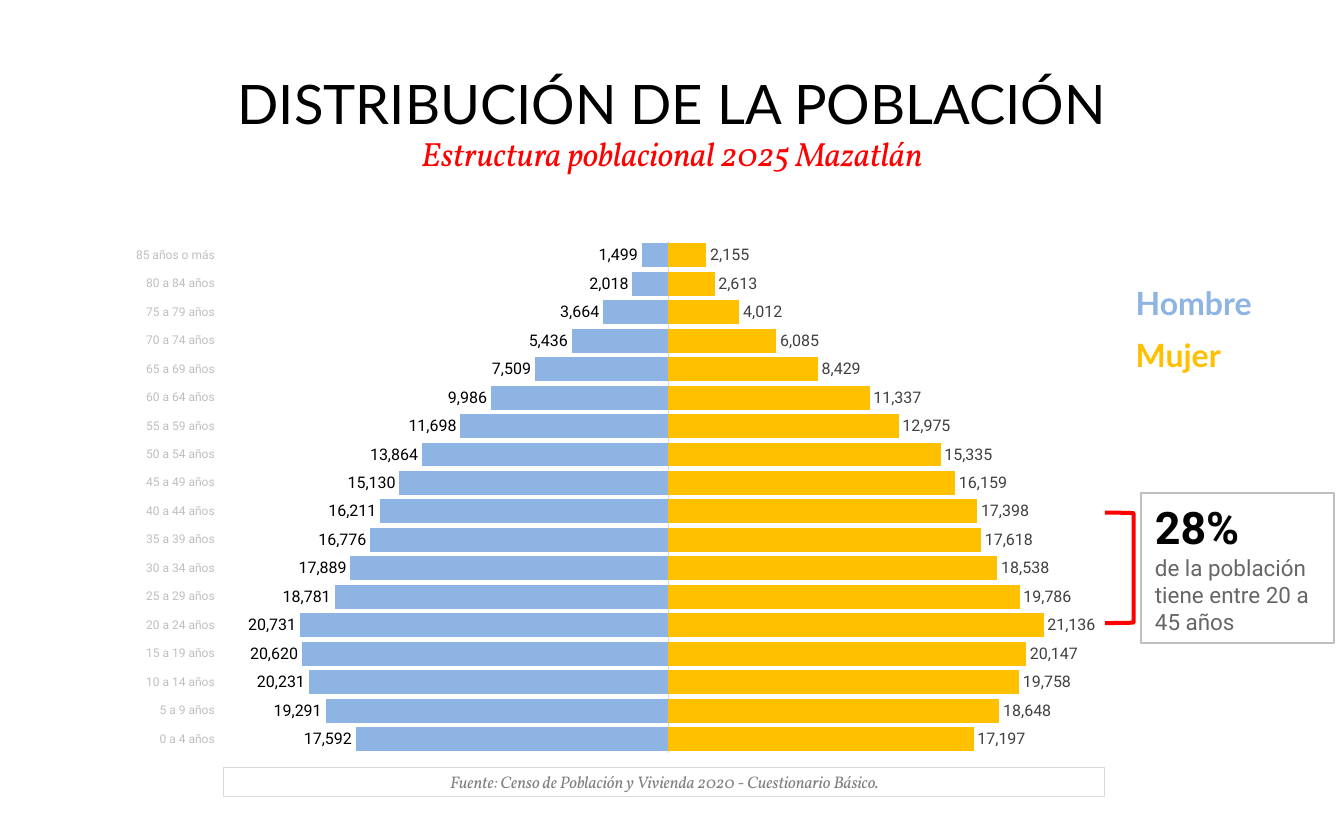
import pptx
import pptx.chart.data
import pptx.dml.color
import pptx.enum.chart
import pptx.enum.shapes
import pptx.enum.text
import pptx.util
from lxml import etree

RGBColor = pptx.dml.color.RGBColor
BLACK = RGBColor(0x00, 0x00, 0x00)
WHITE = RGBColor(0xFF, 0xFF, 0xFF)
RED = RGBColor(0xFF, 0x00, 0x00)
BLUE = RGBColor(0x8E, 0xB4, 0xE3)
AMBER = RGBColor(0xFF, 0xC0, 0x00)
CHARCOAL = RGBColor(0x40, 0x40, 0x40)
DARK_GRAY = RGBColor(0x66, 0x66, 0x66)
GRAY = RGBColor(0x80, 0x80, 0x80)
SILVER = RGBColor(0xBF, 0xBF, 0xBF)
PALE_GRAY = RGBColor(0xD9, 0xD9, 0xD9)

LEFT = pptx.enum.text.PP_ALIGN.LEFT
CENTER = pptx.enum.text.PP_ALIGN.CENTER
RECTANGLE = pptx.enum.shapes.MSO_SHAPE.RECTANGLE

presentation = pptx.Presentation()
presentation.slide_width = pptx.util.Inches(14)
presentation.slide_height = pptx.util.Inches(8.5)
slide = presentation.slides.add_slide(presentation.slide_layouts[6])
column = presentation.slide_width / 140
row = presentation.slide_height / 85


def place(left, top, width, height):
    return int(left * column), int(top * row), int(width * column), int(height * row)


def write(shape, runs, alignment, insets):
    frame = shape.text_frame
    frame.word_wrap = True
    frame.auto_size = pptx.enum.text.MSO_AUTO_SIZE.SHAPE_TO_FIT_TEXT
    frame.vertical_anchor = pptx.enum.text.MSO_ANCHOR.TOP
    frame.margin_left, frame.margin_top, frame.margin_right, frame.margin_bottom = map(pptx.util.Inches, insets)
    for index, (text, font_name, size, color, bold, italic) in enumerate(runs):
        paragraph = frame.paragraphs[0] if index == 0 else frame.add_paragraph()
        paragraph.alignment = alignment
        run = paragraph.add_run()
        run.text = text
        run.font.name = font_name
        run.font.size = pptx.util.Pt(size)
        run.font.color.rgb = color
        run.font.bold = bold
        run.font.italic = italic


title = slide.shapes.add_textbox(*place(10, 8.6, 120, 6))
write(title, [("DISTRIBUCIÓN DE LA POBLACIÓN", "Lato", 40.8, BLACK, False, False)],
      CENTER, (0.12, 0.06, 0.12, 0.06))
title.text_frame.paragraphs[0].line_spacing = 0.7

subtitle = slide.shapes.add_textbox(*place(0, 13.4, 140, 5.3))
write(subtitle, [("Estructura poblacional 2025 Mazatlán", "Vollkorn", 25.2, RED, False, True)],
      CENTER, (0.1, 0.05, 0.1, 0.05))

for index, (name, color) in enumerate([("Hombre", BLUE), ("Mujer", AMBER)]):
    legend = slide.shapes.add_textbox(*place(118.3, 28.8 + 5.4 * index, 15, 5.5))
    write(legend, [(name, "Lato", 24, color, True, False)], LEFT, (0, 0.07, 0.14, 0.07))

ages = [f"{start} a {start + 4} años" for start in range(0, 85, 5)] + ["85 años o más"]
men = [17592, 19291, 20231, 20620, 20731, 18781, 17889, 16776, 16211,
       15130, 13864, 11698, 9986, 7509, 5436, 3664, 2018, 1499]
women = [17197, 18648, 19758, 20147, 21136, 19786, 18538, 17618, 17398,
         16159, 15335, 12975, 11337, 8429, 6085, 4012, 2613, 2155]
chart_data = pptx.chart.data.CategoryChartData()
chart_data.categories = ages
chart_data.add_series("Hombre", [-value for value in men])
chart_data.add_series("Mujer", women)
chart = slide.shapes.add_chart(pptx.enum.chart.XL_CHART_TYPE.BAR_CLUSTERED,
                               *place(12, 24, 106.1, 55.6), chart_data).chart
chart.has_legend = False
chart.has_title = False
chart.font.name = "Calibri"
chart.font.size = pptx.util.Pt(10)
chart.font.color.rgb = BLACK

age_axis = chart.category_axis
age_axis.tick_label_position = pptx.enum.chart.XL_TICK_LABEL_POSITION.LOW
age_axis.major_tick_mark = pptx.enum.chart.XL_TICK_MARK.NONE
age_axis.format.line.color.rgb = PALE_GRAY
age_axis.format.line.width = pptx.util.Pt(0.75)
age_axis.tick_labels.font.name = "Roboto"
age_axis.tick_labels.font.size = pptx.util.Pt(9)
age_axis.tick_labels.font.color.rgb = SILVER

people_axis = chart.value_axis
people_axis.visible = False
people_axis.has_major_gridlines = False
people_axis.minimum_scale = -25000
people_axis.maximum_scale = 25000

plot = chart.plots[0]
plot.gap_width = 19
plot.overlap = 100
plot.vary_by_categories = False
styles = [(BLUE, BLACK, "\\-0;0,000"), (AMBER, CHARCOAL, "#,##0")]
for series, (fill_color, label_color, number_format) in zip(plot.series, styles):
    series.invert_if_negative = False
    series.format.fill.solid()
    series.format.fill.fore_color.rgb = fill_color
    labels = series.data_labels
    labels.show_value = True
    labels.number_format = number_format
    labels.number_format_is_linked = False
    labels.position = pptx.enum.chart.XL_LABEL_POSITION.OUTSIDE_END
    labels.font.name = "Roboto"
    labels.font.size = pptx.util.Pt(12)
    labels.font.color.rgb = label_color

namespace = "{http://schemas.openxmlformats.org/drawingml/2006/chart}"
plot_area = chart.element.find(f".//{namespace}plotArea")
for old_layout in plot_area.findall(namespace + "layout"):
    plot_area.remove(old_layout)
layout = etree.Element(namespace + "layout")
plot_area.insert(0, layout)
manual_layout = etree.SubElement(layout, namespace + "manualLayout")
for tag, value in [("layoutTarget", "inner"), ("xMode", "edge"), ("yMode", "edge"),
                   ("x", "0.107"), ("y", "0.02"), ("w", "0.872"), ("h", "0.96")]:
    etree.SubElement(manual_layout, namespace + tag).set("val", value)

bracket = slide.shapes.add_shape(pptx.enum.shapes.MSO_SHAPE.RIGHT_BRACKET, *place(115.1, 53.4, 3, 11.5))
bracket.adjustments[0] = 0.02
bracket.shadow.inherit = False
bracket.fill.background()
bracket.line.color.rgb = RED
bracket.line.width = pptx.util.Pt(3)

boxes = [
    ((23.3, 79.9, 91.8, 3.1), PALE_GRAY, 0.75, CENTER, (0.1, 0.05, 0.1, 0.05),
     [("Fuente: Censo de Población y Vivienda 2020 - Cuestionario Básico.", "Vollkorn", 12.6, GRAY, False, True)]),
    ((118.9, 51.4, 20.1, 15.6), SILVER, 1.5, LEFT, (0.14, 0.07, 0.14, 0.07),
     [("28%", "Roboto", 33.6, BLACK, True, False),
      ("de la población tiene entre 20 a 45 años", "Roboto", 16.8, DARK_GRAY, False, False)]),
]
for position, line_color, line_width, alignment, insets, runs in boxes:
    box = slide.shapes.add_shape(RECTANGLE, *place(*position))
    box.shadow.inherit = False
    box.fill.solid()
    box.fill.fore_color.rgb = WHITE
    box.line.color.rgb = line_color
    box.line.width = pptx.util.Pt(line_width)
    write(box, runs, alignment, insets)

presentation.save("out.pptx")
